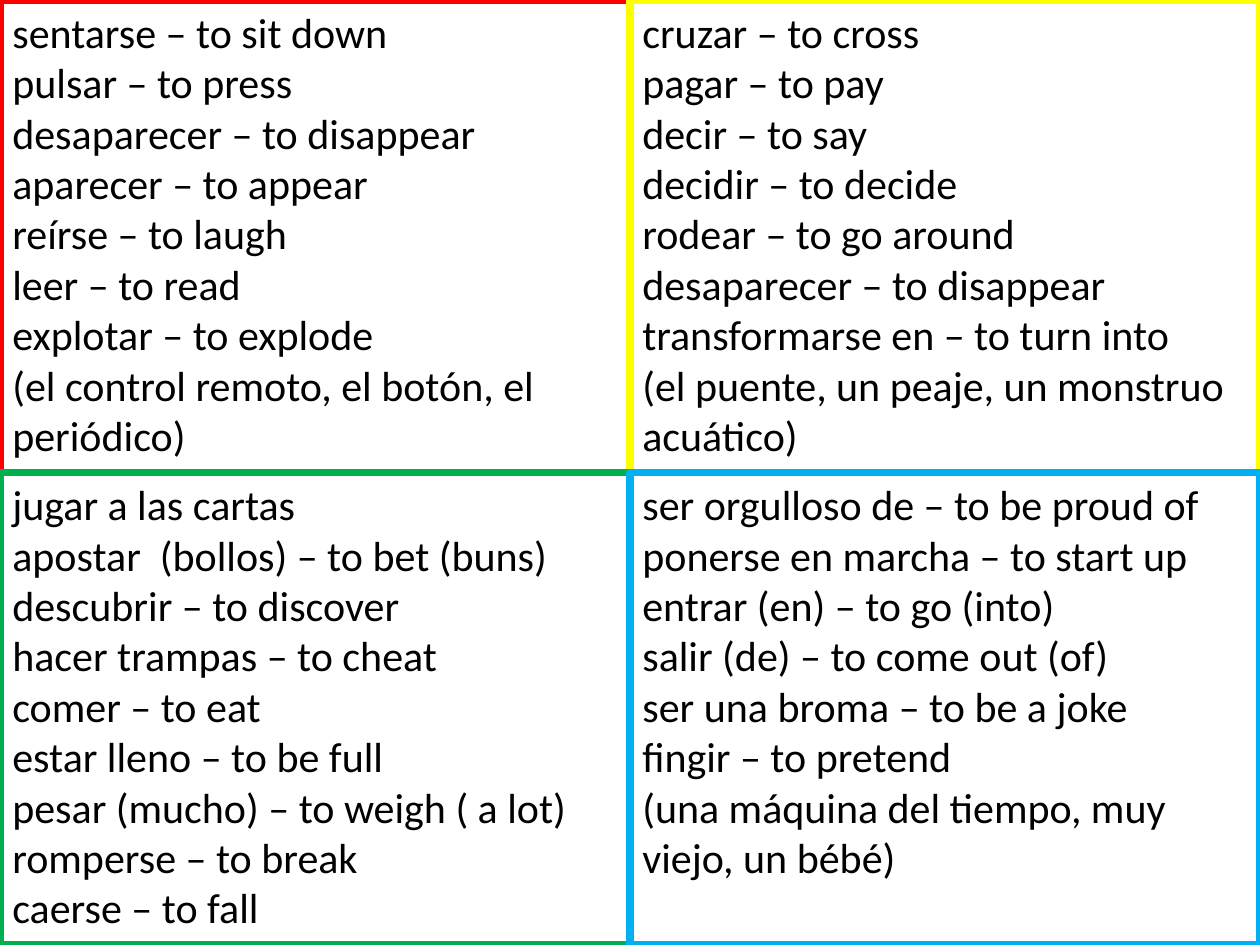
"""Build a four-quadrant slide of Spanish story vocabulary."""
import pptx
import pptx.dml.color
import pptx.enum.shapes
import pptx.enum.text
import pptx.util

Inches = pptx.util.Inches
Pt = pptx.util.Pt
RGBColor = pptx.dml.color.RGBColor

THEME = {
    "font": "Calibri",
    "size": 24,
    "text": "000000",
    "border_width": 4.5,
    "borders": ("FF0000", "FFFF00", "00B050", "00B0F0"),
}

VOCABULARY = (
    (
        "sentarse – to sit down",
        "pulsar – to press\ndesaparecer – to disappear\naparecer – to appear\n"
        "reírse – to laugh\nleer – to read\nexplotar – to explode\n"
        "(el control remoto, el botón, el periódico)",
    ),
    (
        "cruzar – to cross",
        "pagar – to pay",
        "decir – to say",
        "decidir – to decide",
        "rodear – to go around",
        "desaparecer – to disappear\ntransformarse en – to turn into\n"
        "(el puente, un peaje, un monstruo acuático)",
    ),
    (
        "jugar a las cartas\napostar  (bollos) – to bet (buns)\n"
        "descubrir – to discover\nhacer trampas – to cheat\ncomer – to eat\n"
        "estar lleno – to be full\npesar (mucho) – to weigh ( a lot)\n"
        "romperse – to break\ncaerse – to fall",
    ),
    (
        "ser orgulloso de – to be proud of\nponerse en marcha – to start up",
        "entrar (en) – to go (into)",
        "salir (de) – to come out (of)",
        "ser una broma – to be a joke",
        "fingir – to pretend\n(una máquina del tiempo, muy viejo, un bébé)",
    ),
)

SLIDE_WIDTH, SLIDE_HEIGHT = 10, 7.5
COLUMNS = ROWS = 2


def write_text(paragraph, text, *, font, size, color, align):
    paragraph.text = text
    paragraph.alignment = align
    for run in paragraph.runs:
        run.font.name = font
        run.font.size = Pt(size)
        run.font.color.rgb = RGBColor.from_string(color)


def add_quadrant(slide, index, entries, border):
    row, column = divmod(index, COLUMNS)
    width, height = SLIDE_WIDTH / COLUMNS, SLIDE_HEIGHT / ROWS
    quadrant = slide.shapes.add_shape(
        pptx.enum.shapes.MSO_SHAPE.RECTANGLE,
        Inches(column * width), Inches(row * height), Inches(width), Inches(height),
    )
    quadrant.shadow.inherit = False
    quadrant.fill.background()
    quadrant.line.color.rgb = RGBColor.from_string(border)
    quadrant.line.width = Pt(THEME["border_width"])

    frame = quadrant.text_frame
    frame.word_wrap = True
    frame.vertical_anchor = pptx.enum.text.MSO_ANCHOR.TOP
    for position, entry in enumerate(entries):
        paragraph = frame.add_paragraph() if position else frame.paragraphs[0]
        write_text(
            paragraph, entry, font=THEME["font"], size=THEME["size"],
            color=THEME["text"], align=pptx.enum.text.PP_ALIGN.LEFT,
        )


def main():
    deck = pptx.Presentation()
    deck.slide_width, deck.slide_height = Inches(SLIDE_WIDTH), Inches(SLIDE_HEIGHT)
    slide = deck.slides.add_slide(deck.slide_layouts[6])
    for index, (entries, border) in enumerate(zip(VOCABULARY, THEME["borders"])):
        add_quadrant(slide, index, entries, border)
    deck.save("out.pptx")


if __name__ == "__main__":
    main()
